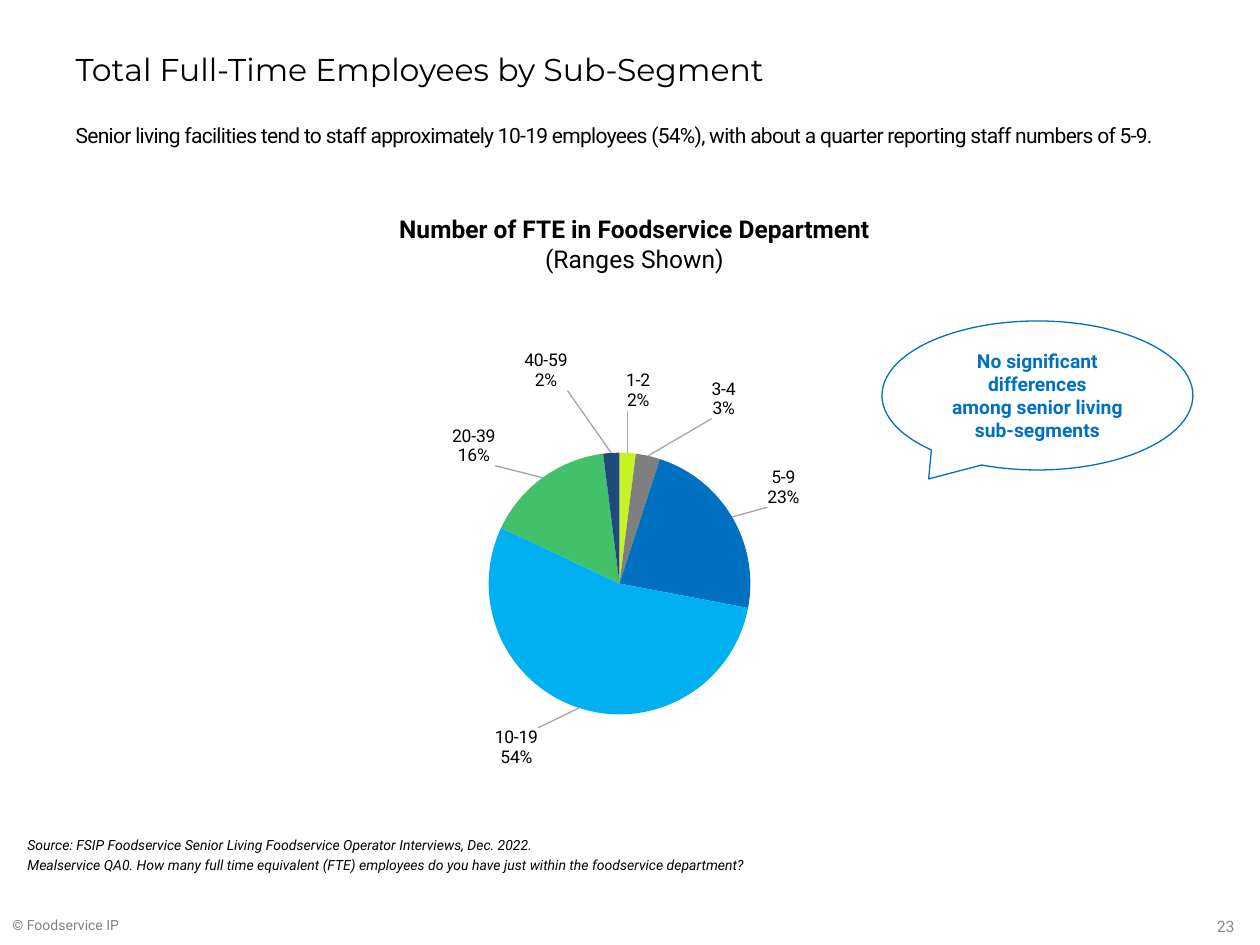
from dataclasses import dataclass

import pptx
import pptx.chart.data
import pptx.dml.color
import pptx.enum.chart
import pptx.enum.shapes
import pptx.enum.text
import pptx.oxml
import pptx.oxml.ns
import pptx.util

PX = 914400 / 126  # EMU in one px
COLORS = {
    "black": "000000", "blue": "0070C0", "footer": "808080", "number": "8C8C8C",
    "lime": "C6F226", "gray": "7F7F7F", "sky": "00B0F0", "green": "43C16A",
    "navy": "1F497D", "leader": "A6A6A6",
}
ALIGN = pptx.enum.text.PP_ALIGN
ANCHOR = pptx.enum.text.MSO_ANCHOR
CHART_BOX = (67, 272, 1073, 557)


@dataclass(frozen=True)
class Line:
    text: str
    size: float
    color: str = "black"
    font: str = "Roboto"
    bold: bool = False
    italic: bool = False
    before: float = 0


@dataclass(frozen=True)
class Slice:
    staff: str
    share: float
    color: str
    dx: int  # label shift from its place at the rim, px
    dy: int


SLICES = [
    Slice("1-2", 0.02, "lime", 10, -35),
    Slice("3-4", 0.03, "gray", 62, -30),
    Slice("5-9", 0.23, "blue", 29, -6),
    Slice("10-19", 0.54, "sky", -39, 13),
    Slice("20-39", 0.16, "green", -43, -6),
    Slice("40-59", 0.02, "navy", -65, -55),
]


def px(length: int) -> pptx.util.Emu:
    return pptx.util.Emu(round(length * PX))


def rgb(name: str) -> pptx.dml.color.RGBColor:
    return pptx.dml.color.RGBColor.from_string(COLORS[name])


def c_xml(body: str):
    """Parse one chart element, declaring the namespaces on its tag."""
    tag, rest = body.split(">", 1)
    closing = "/" if tag.endswith("/") else ""
    spaces = pptx.oxml.ns.nsdecls("c", "a")
    return pptx.oxml.parse_xml(f"{tag.rstrip('/')} {spaces}{closing}>{rest}")


def manual_layout(**values) -> object:
    parts = "".join(f'<c:{key} val="{value}"/>' for key, value in values.items())
    return c_xml(f"<c:layout><c:manualLayout>{parts}</c:manualLayout></c:layout>")


def place(shape, box: tuple[int, int, int, int]) -> None:
    shape.left, shape.top, shape.width, shape.height = map(px, box)


def write(shape, lines: list[Line], align=ALIGN.LEFT, anchor=ANCHOR.TOP) -> None:
    frame = shape.text_frame
    frame.word_wrap = True
    frame.auto_size = pptx.enum.text.MSO_AUTO_SIZE.NONE
    frame.vertical_anchor = anchor
    for index, line in enumerate(lines):
        paragraph = frame.paragraphs[0] if index == 0 else frame.add_paragraph()
        paragraph.alignment = align
        paragraph.space_before = pptx.util.Pt(line.before)
        for part_index, part in enumerate(line.text.split("\n")):
            if part_index:
                paragraph.add_line_break()
            run = paragraph.add_run()
            run.text = part
            run.font.name = line.font
            run.font.size = pptx.util.Pt(line.size)
            run.font.bold = line.bold
            run.font.italic = line.italic
            run.font.color.rgb = rgb(line.color)


def add_text(slide, box: tuple[int, int, int, int], lines: list[Line],
             align=ALIGN.LEFT, anchor=ANCHOR.TOP) -> None:
    write(slide.shapes.add_textbox(*map(px, box)), lines, align, anchor)


def style_slice(point, part: Slice) -> None:
    point.format.fill.solid()
    point.format.fill.fore_color.rgb = rgb(part.color)
    label = point.data_label
    label.position = pptx.enum.chart.XL_LABEL_POSITION.OUTSIDE_END
    label.font.size = pptx.util.Pt(10)
    label.font.name = "Roboto"
    label.font.color.rgb = rgb("black")


def add_staff_pie(slide) -> None:
    data = pptx.chart.data.CategoryChartData(number_format="0%")
    data.categories = [part.staff for part in SLICES]
    data.add_series("Series 1", [part.share for part in SLICES])
    chart = slide.shapes.add_chart(
        pptx.enum.chart.XL_CHART_TYPE.PIE, *map(px, CHART_BOX), data).chart
    chart.has_title = False
    chart.has_legend = False
    chart.font.name = "Roboto"
    chart.font.size = pptx.util.Pt(10)
    chart.font.color.rgb = rgb("black")
    plot = chart.plots[0]
    plot.vary_by_categories = True
    for index, part in enumerate(SLICES):
        style_slice(plot.series[0].points[index], part)

    # Fixed pie area
    area = chart.element.find(".//" + pptx.oxml.ns.qn("c:plotArea"))
    for old in area.findall(pptx.oxml.ns.qn("c:layout")):
        area.remove(old)
    area.insert(0, manual_layout(layoutTarget="inner", xMode="edge", yMode="edge",
                                 x=0.393, y=0.324, w=0.244, h=0.471))

    # Labels moved off the rim, with leader lines
    labels = plot.series[0].format and area.find(".//" + pptx.oxml.ns.qn("c:dLbls"))
    for label, part in zip(labels.findall(pptx.oxml.ns.qn("c:dLbl")), SLICES):
        label.insert(1, manual_layout(x=round(part.dx / CHART_BOX[2], 4),
                                      y=round(part.dy / CHART_BOX[3], 4)))
        label.insert(2, c_xml('<c:numFmt formatCode="0%" sourceLinked="0"/>'))
        label.find(pptx.oxml.ns.qn("c:showCatName")).set("val", "1")
        label.append(c_xml("<c:separator>\n</c:separator>"))
    labels.append(c_xml(
        '<c:leaderLines><c:spPr><a:ln w="9525"><a:solidFill>'
        f'<a:srgbClr val="{COLORS["leader"]}"/>'
        "</a:solidFill></a:ln></c:spPr></c:leaderLines>"))


def add_callout(slide) -> None:
    callout = slide.shapes.add_shape(
        pptx.enum.shapes.MSO_SHAPE.OVAL_CALLOUT, *map(px, (882, 321, 311, 149)))
    callout.adjustments[0] = -0.35
    callout.adjustments[1] = 0.56
    callout.shadow.inherit = False
    callout.fill.background()
    callout.line.color.rgb = rgb("blue")
    callout.line.width = pptx.util.Pt(0.75)
    write(callout, [Line("No significant differences\namong senior living sub-segments",
                         11, "blue", bold=True)], ALIGN.CENTER, ANCHOR.MIDDLE)


def main() -> None:
    deck = pptx.Presentation()
    deck.slide_width, deck.slide_height = px(1260), px(945)
    slide = deck.slides.add_slide(deck.slide_layouts[1])

    # Title and finding
    title, finding = slide.placeholders
    place(title, (63, 38, 1134, 62))
    write(title, [Line("Total Full-Time Employees by Sub-Segment", 18, font="Montserrat")],
          anchor=ANCHOR.MIDDLE)
    place(finding, (63, 116, 1197, 731))
    write(finding, [Line(
        "Senior living facilities tend to staff approximately 10-19 employees (54%), "
        "with about a quarter reporting staff numbers of 5-9.", 12)])
    paragraph = finding.text_frame.paragraphs[0]
    properties = paragraph._p.get_or_add_pPr()
    properties.set("marL", "0")
    properties.set("indent", "0")
    properties.append(pptx.oxml.parse_xml(f"<a:buNone {pptx.oxml.ns.nsdecls('a')}/>"))
    paragraph.runs[0].font._element.set("spc", "-40")

    # Chart with its heading and remark
    add_text(slide, (67, 208, 1135, 72), [
        Line("Number of FTE in Foodservice Department", 14, bold=True),
        Line("(Ranges Shown)", 14)], ALIGN.CENTER)
    add_staff_pie(slide)
    add_callout(slide)

    # Source and footer
    add_text(slide, (15, 825, 963, 54), [
        Line("Source: FSIP Foodservice Senior Living Foodservice Operator Interviews, "
             "Dec. 2022.", 8, italic=True),
        Line("Mealservice QA0. How many full time equivalent (FTE) employees do you have "
             "just within the foodservice department?", 8, italic=True, before=1.6)],
        anchor=ANCHOR.BOTTOM)
    add_text(slide, (0, 891, 290, 49), [Line("© Foodservice IP", 8, "footer")],
             anchor=ANCHOR.BOTTOM)
    add_text(slide, (903, 901, 344, 50), [Line("23", 9, "number")],
             ALIGN.RIGHT, ANCHOR.MIDDLE)
    deck.save("out.pptx")


if __name__ == "__main__":
    main()
